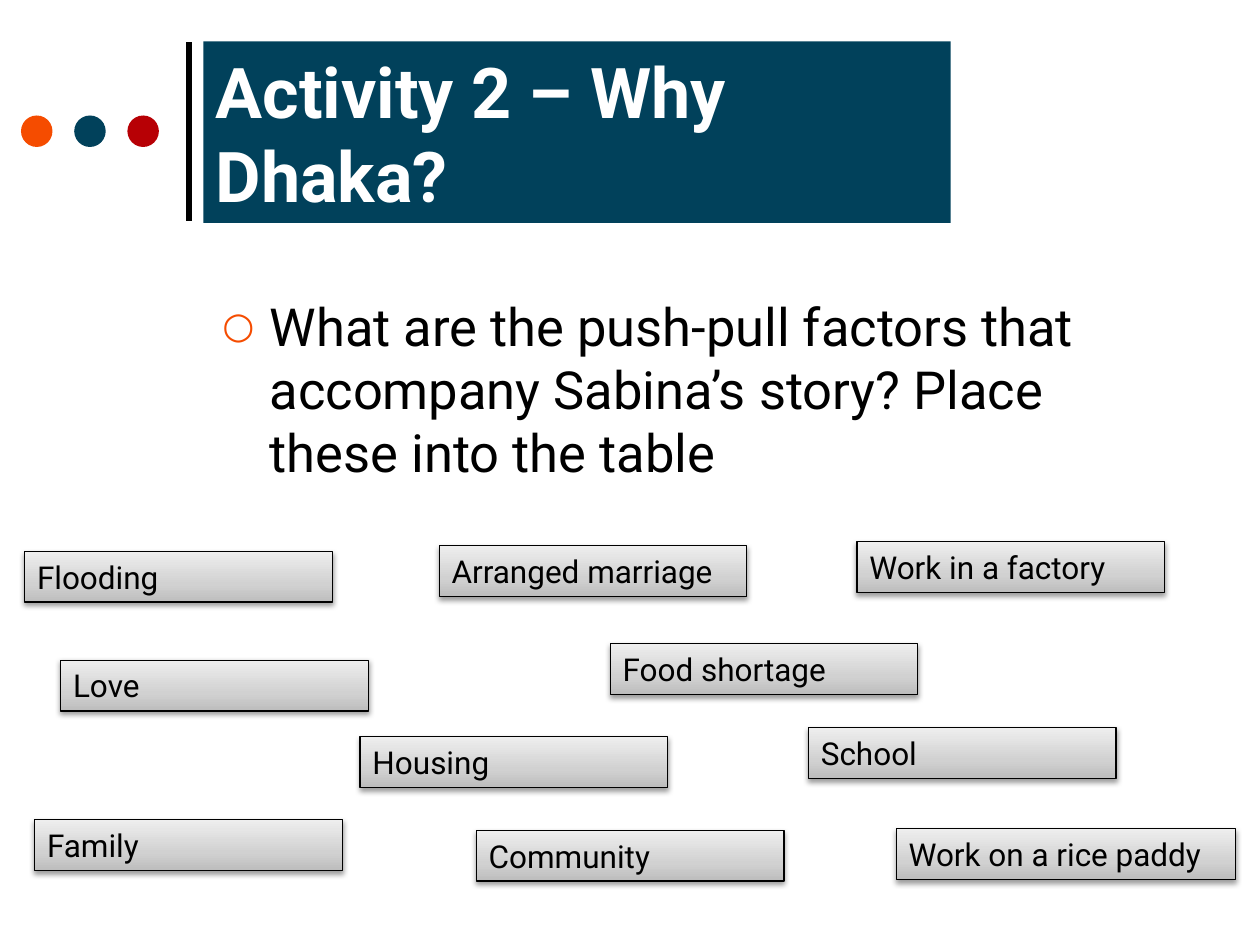
from lxml import etree
from pptx import Presentation
from pptx.dml.color import RGBColor
from pptx.enum.shapes import MSO_CONNECTOR, MSO_SHAPE
from pptx.enum.text import MSO_ANCHOR, MSO_AUTO_SIZE, PP_ALIGN
from pptx.oxml import parse_xml
from pptx.oxml.ns import nsdecls, qn
from pptx.util import Pt

STRAIGHT = MSO_CONNECTOR.STRAIGHT
OVAL = MSO_SHAPE.OVAL
RECTANGLE = MSO_SHAPE.RECTANGLE
TOP = MSO_ANCHOR.TOP
MIDDLE = MSO_ANCHOR.MIDDLE
LEFT = PP_ALIGN.LEFT
GROW = MSO_AUTO_SIZE.SHAPE_TO_FIT_TEXT
FIXED = MSO_AUTO_SIZE.NONE

COLORS = {
    "ink": "000000",
    "paper": "FFFFFF",
    "orange": "F54C00",
    "teal": "01415B",
    "red": "B70005",
    "card_dark": "BDBDBD",
    "card_mid": "D1D1D1",
    "card_light": "EEEEEE",
}
FONT = "Roboto"
CARD_WIDTH, CARD_HEIGHT = 175.8, 29
CARD_STOPS = [(0, "card_dark"), (35, "card_mid"), (100, "card_light")]
FACTORS = [
    ("Flooding", 14.1, 315.1, CARD_WIDTH),
    ("Love", 34.7, 377.3, CARD_WIDTH),
    ("Arranged marriage", 251, 311.8, CARD_WIDTH),
    ("Community", 272.2, 474.5, CARD_WIDTH),
    ("Food shortage", 348.7, 367.8, CARD_WIDTH),
    ("School", 462, 415.8, CARD_WIDTH),
    ("Family", 19.8, 468.4, CARD_WIDTH),
    ("Work on a rice paddy", 512.1, 473.6, 193.8),
    ("Work in a factory", 489.7, 309.6, CARD_WIDTH),
    ("Housing", 205.8, 420.9, CARD_WIDTH),
]


def rgb(name):
    return RGBColor.from_string(COLORS[name])


def apply_format(target, values):
    for attribute, value in values.items():
        setattr(target, attribute, value)


def write_text(shape, text, size, color, bold=False, anchor=TOP, auto_size=FIXED):
    frame = shape.text_frame
    apply_format(frame, {"word_wrap": True, "auto_size": auto_size, "vertical_anchor": anchor})
    paragraph = frame.paragraphs[0]
    paragraph.alignment = LEFT
    run = paragraph.add_run()
    run.text = text
    apply_format(run.font, {"name": FONT, "size": Pt(size), "bold": bold})
    run.font.color.rgb = rgb(color)
    return paragraph


def add_block(slide, preset, left, top, width, height, color):
    block = slide.shapes.add_shape(preset, Pt(left), Pt(top), Pt(width), Pt(height))
    block.shadow.inherit = False
    block.fill.solid()
    block.fill.fore_color.rgb = rgb(color)
    block.line.fill.background()
    return block


def add_rule(slide):
    rule = slide.shapes.add_connector(STRAIGHT, Pt(108), Pt(126), Pt(108), Pt(24))
    rule.line.color.rgb = rgb("ink")
    rule.line.width = Pt(3)
    etree.SubElement(rule._element.spPr, qn("a:effectLst"))


def add_question(slide, text):
    question = slide.shapes.add_textbox(Pt(120), Pt(162), Pt(552), Pt(312))
    paragraph = write_text(question, text, 30, "ink")
    question.text_frame.margin_top = Pt(6)
    properties = paragraph._p.get_or_add_pPr()
    properties.set("marL", str(Pt(27)))
    properties.set("indent", str(Pt(-27)))
    color = etree.SubElement(properties, qn("a:buClr"))
    etree.SubElement(color, qn("a:srgbClr"), val=COLORS["orange"])
    etree.SubElement(properties, qn("a:buSzPct"), val="70000")
    etree.SubElement(properties, qn("a:buFont"), typeface=FONT)
    etree.SubElement(properties, qn("a:buChar"), char="○")


def shade_card(card):
    stops = "".join(
        f'<a:gs pos="{position * 1000}"><a:srgbClr val="{COLORS[name]}"/></a:gs>'
        for position, name in CARD_STOPS
    )
    gradient = parse_xml(
        f'<a:gradFill {nsdecls("a")} rotWithShape="1"><a:gsLst>{stops}</a:gsLst>'
        '<a:lin ang="16200000" scaled="0"/></a:gradFill>'
    )
    properties = card._element.spPr
    properties.replace(properties.find(qn("a:solidFill")), gradient)
    shadow = parse_xml(
        f'<a:outerShdw {nsdecls("a")} blurRad="{Pt(3.1)}" dist="{Pt(1.6)}" dir="5400000" '
        f'rotWithShape="0"><a:srgbClr val="{COLORS["ink"]}"><a:alpha val="38000"/>'
        "</a:srgbClr></a:outerShdw>"
    )
    properties.find(qn("a:effectLst")).append(shadow)


def add_factor(slide, text, left, top, width):
    card = add_block(slide, RECTANGLE, left, top, width, CARD_HEIGHT, "card_mid")
    card.line.color.rgb = rgb("ink")
    card.line.width = Pt(0.75)
    shade_card(card)
    write_text(card, text, 18, "ink", auto_size=GROW)


def main():
    deck = Presentation()
    apply_format(deck, {"slide_width": Pt(720), "slide_height": Pt(540)})
    slide = deck.slides.add_slide(deck.slide_layouts[6])
    slide.background.fill.solid()
    slide.background.fill.fore_color.rgb = rgb("paper")
    add_rule(slide)
    for index, color in enumerate(("orange", "teal", "red")):
        add_block(slide, OVAL, 12 + index * 30.4, 66, 18, 18, color)
    add_question(
        slide,
        "What are the push-pull factors that accompany Sabina’s story? "
        "Place these into the table",
    )
    title = add_block(slide, RECTANGLE, 116.2, 23.6, 427, 103.8, "teal")
    write_text(title, "Activity 2 – Why Dhaka?", 40, "paper", bold=True, anchor=MIDDLE)
    for factor in FACTORS:
        add_factor(slide, *factor)
    deck.save("out.pptx")


if __name__ == "__main__":
    main()
